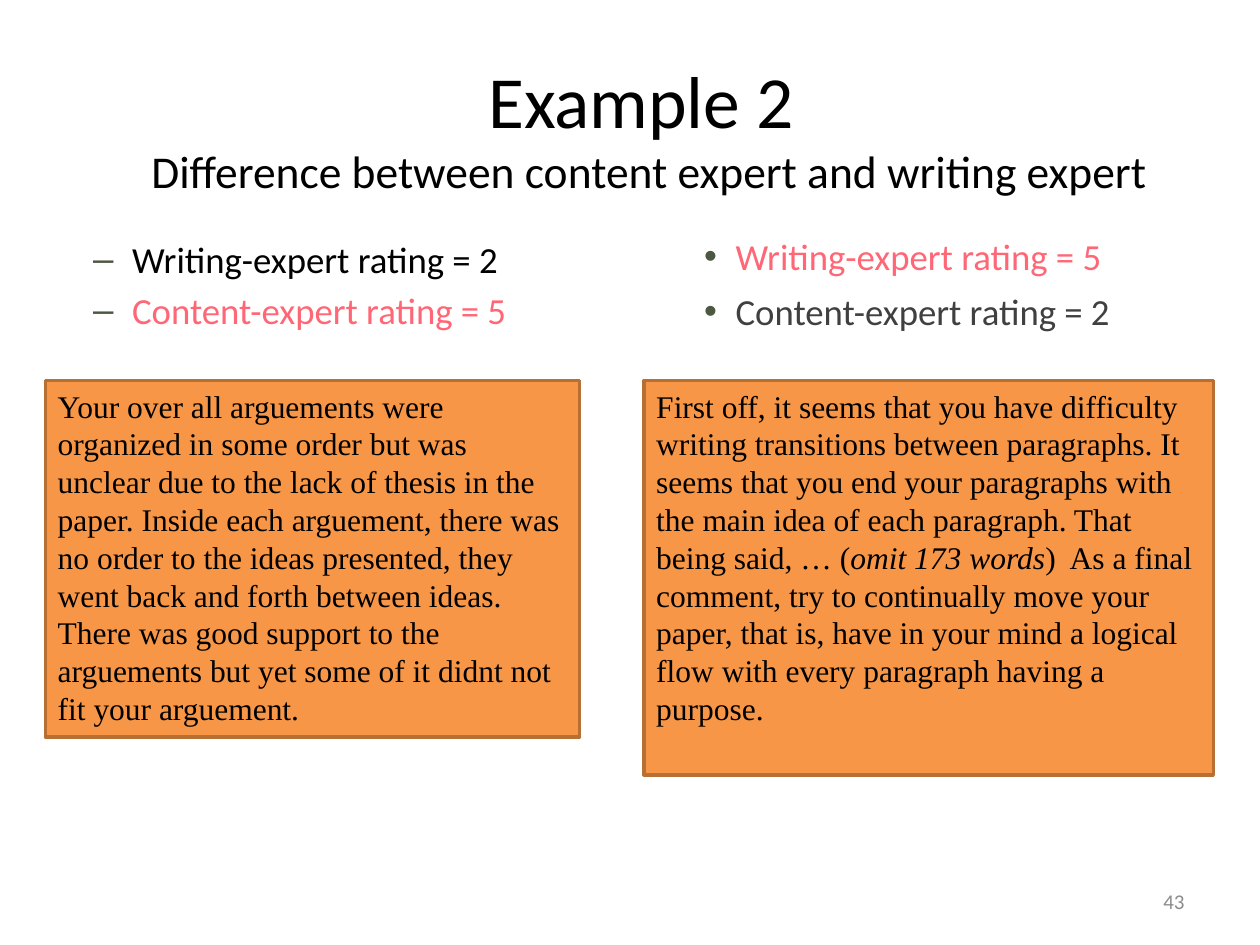
"""Build a slide contrasting writing-expert and content-expert ratings of two reviews."""
from dataclasses import dataclass

from lxml.etree import SubElement
from pptx import Presentation
from pptx.dml.color import RGBColor
from pptx.enum.shapes import MSO_SHAPE
from pptx.enum.text import MSO_ANCHOR, PP_ALIGN
from pptx.oxml.ns import qn
from pptx.util import Inches, Pt


@dataclass(frozen=True)
class Theme:
    heading_font: str = "Calibri"
    review_font: str = "Times New Roman"
    black: str = "000000"
    gray: str = "404040"
    highlight: str = "FF6776"
    bullet: str = "4D5843"
    number: str = "8C8C8C"
    box_fill: str = "F79646"
    box_line: str = "B76F34"
    title_size: int = 42
    subtitle_size: int = 26
    rating_size: int = 21
    review_size: int = 18
    number_size: int = 12


THEME = Theme()
TITLE = ("Example 2 ", "Difference between content expert and writing expert")
SLIDE_NUMBER = "43"
REVIEW_TOP = 3.02
COLUMNS = [
    {
        "ratings": [("Writing-expert rating = 2", THEME.black),
                    ("Content-expert rating = 5", THEME.highlight)],
        "ratings_area": (0.14, 1.83, 4.22, 1.19),
        "bullet": "–", "margin": 0.81, "indent": -0.31, "space": 4.2,
        "review": [("Your over all arguements were organized in some order but was unclear "
                    "due to the lack of thesis in the paper. Inside each arguement, there was "
                    "no order to the ideas presented, they went back and forth between ideas. "
                    "There was good support to the arguements but yet some of it didnt not "
                    "fit your arguement.", False)],
        "left": 0.36, "width": 4.24, "height": 2.83,
    },
    {
        "ratings": [("Writing-expert rating = 5", THEME.highlight),
                    ("Content-expert rating = 2", THEME.gray)],
        "ratings_area": (5.11, 1.81, 4.22, 1.2),
        "bullet": "•", "margin": 0.63, "indent": -0.25, "space": 6,
        "review": [("First off, it seems that you have difficulty writing transitions between "
                    "paragraphs. It seems that you end your paragraphs with the main idea of "
                    "each paragraph. That being said, … (", False),
                   ("omit 173 words", True),
                   (")  As a final comment, try to continually move your paper, that is, have "
                    "in your mind a logical flow with every paragraph having a purpose.", False)],
        "left": 5.11, "width": 4.52, "height": 3.13,
    },
]


def format_run(run, font, size, color, italic=False):
    run.font.name = font
    run.font.size = Pt(size)
    run.font.color.rgb = RGBColor.from_string(color)
    run.font.italic = italic


def add_text_area(slide, area, anchor=MSO_ANCHOR.TOP):
    text_frame = slide.shapes.add_textbox(*map(Inches, area)).text_frame
    text_frame.word_wrap = True
    text_frame.vertical_anchor = anchor
    return text_frame


def add_title(slide):
    paragraph = add_text_area(slide, (0.98, 0.27, 8.35, 1.47), MSO_ANCHOR.MIDDLE).paragraphs[0]
    paragraph.text = "\v".join(TITLE)
    paragraph.alignment = PP_ALIGN.CENTER
    for run, size in zip(paragraph.runs, (THEME.title_size, THEME.subtitle_size)):
        format_run(run, THEME.heading_font, size, THEME.black)


def set_bullet(paragraph, column):
    properties = paragraph._p.get_or_add_pPr()
    properties.set("marL", str(Inches(column["margin"])))
    properties.set("indent", str(Inches(column["indent"])))
    bullet_color = SubElement(properties, qn("a:buClr"))
    SubElement(bullet_color, qn("a:srgbClr"), val=THEME.bullet)
    SubElement(properties, qn("a:buFont"), typeface="Arial")
    SubElement(properties, qn("a:buChar"), char=column["bullet"])


def add_ratings(slide, column):
    text_frame = add_text_area(slide, column["ratings_area"])
    text_frame.text = "\n".join(text for text, color in column["ratings"])
    for paragraph, (text, color) in zip(text_frame.paragraphs, column["ratings"]):
        paragraph.level = 1
        paragraph.space_before = Pt(column["space"])
        set_bullet(paragraph, column)
        format_run(paragraph.runs[0], THEME.heading_font, THEME.rating_size, color)


def add_review(slide, column):
    area = (column["left"], REVIEW_TOP, column["width"], column["height"])
    shape = slide.shapes.add_shape(MSO_SHAPE.RECTANGLE, *map(Inches, area))
    shape.shadow.inherit = False
    shape.fill.solid()
    shape.fill.fore_color.rgb = RGBColor.from_string(THEME.box_fill)
    shape.line.color.rgb = RGBColor.from_string(THEME.box_line)
    shape.line.width = Pt(2)
    shape.text_frame.word_wrap = True
    shape.text_frame.vertical_anchor = MSO_ANCHOR.TOP
    paragraph = shape.text_frame.paragraphs[0]
    paragraph.alignment = PP_ALIGN.LEFT
    for text, italic in column["review"]:
        run = paragraph.add_run()
        run.text = text
        format_run(run, THEME.review_font, THEME.review_size, THEME.black, italic)


def add_slide_number(slide):
    paragraph = add_text_area(slide, (7.17, 6.95, 2.33, 0.4), MSO_ANCHOR.MIDDLE).paragraphs[0]
    paragraph.text = SLIDE_NUMBER
    paragraph.alignment = PP_ALIGN.RIGHT
    format_run(paragraph.runs[0], THEME.heading_font, THEME.number_size, THEME.number)


def main():
    presentation = Presentation()
    presentation.slide_width, presentation.slide_height = Inches(10), Inches(7.5)
    slide = presentation.slides.add_slide(presentation.slide_layouts[6])
    add_title(slide)
    for column in COLUMNS:
        add_ratings(slide, column)
        add_review(slide, column)
    add_slide_number(slide)
    presentation.save("out.pptx")


if __name__ == "__main__":
    main()
